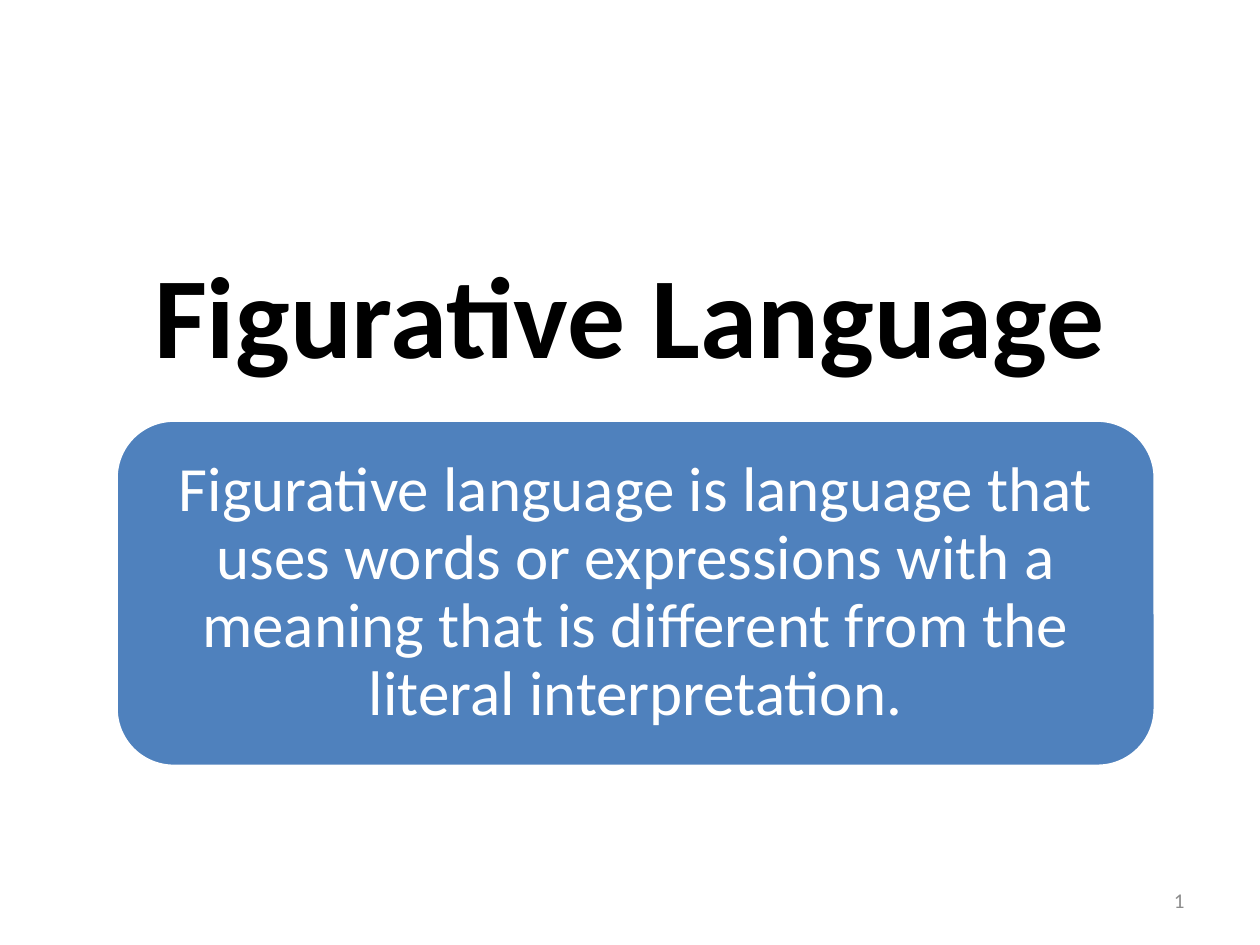
from dataclasses import dataclass

import pptx
import pptx.dml.color
import pptx.enum.shapes
import pptx.enum.text
import pptx.util

Cm = pptx.util.Cm
Pt = pptx.util.Pt
Align = pptx.enum.text.PP_ALIGN


@dataclass
class TextBlock:
    text: str
    left: float
    top: float
    width: float
    height: float
    size: float
    color: str
    alignment: Align = Align.CENTER
    bold: bool = False
    line_spacing: float = 1.0
    side_inset: float = 0.25
    vertical_inset: float = 0.13
    fill: str | None = None
    outline: str = "FFFFFF"


TITLE = TextBlock("Figurative Language", 1.9, 4.25, 21.59, 4.08, 66, "000000", bold=True)
DEFINITION = TextBlock(
    "Figurative language is language that uses words or expressions with a "
    "meaning that is different from the literal interpretation.",
    2.34, 8.47, 20.95, 6.98, 36, "FFFFFF",
    line_spacing=0.9, side_inset=0.38, vertical_inset=0.38, fill="4F81BD",
)
SLIDE_NUMBER = TextBlock("1", 18.2, 17.65, 5.93, 1.01, 12, "8C8C8C", Align.RIGHT)


def rgb(value: str) -> pptx.dml.color.RGBColor:
    return pptx.dml.color.RGBColor.from_string(value)


def draw_block(slide: pptx.slide.Slide, block: TextBlock) -> None:
    bounds = [Cm(length) for length in (block.left, block.top, block.width, block.height)]
    if block.fill:
        shape = slide.shapes.add_shape(
            pptx.enum.shapes.MSO_SHAPE.ROUNDED_RECTANGLE, *bounds
        )
        shape.shadow.inherit = False
        shape.fill.solid()
        shape.fill.fore_color.rgb = rgb(block.fill)
        shape.line.color.rgb = rgb(block.outline)
        shape.line.width = Pt(2)
    else:
        shape = slide.shapes.add_textbox(*bounds)

    frame = shape.text_frame
    frame.word_wrap = True
    frame.vertical_anchor = pptx.enum.text.MSO_ANCHOR.MIDDLE
    frame.margin_left = frame.margin_right = Cm(block.side_inset)
    frame.margin_top = frame.margin_bottom = Cm(block.vertical_inset)

    paragraph = frame.paragraphs[0]
    paragraph.text = block.text
    paragraph.alignment = block.alignment
    paragraph.line_spacing = block.line_spacing
    paragraph.font.name = "Calibri"
    paragraph.font.size = Pt(block.size)
    paragraph.font.bold = block.bold
    paragraph.font.color.rgb = rgb(block.color)


def main() -> None:
    presentation = pptx.Presentation()
    presentation.slide_width = Cm(25.4)
    presentation.slide_height = Cm(19.05)
    slide = presentation.slides.add_slide(presentation.slide_layouts[6])
    for block in (TITLE, DEFINITION, SLIDE_NUMBER):
        draw_block(slide, block)
    presentation.save("out.pptx")


if __name__ == "__main__":
    main()
